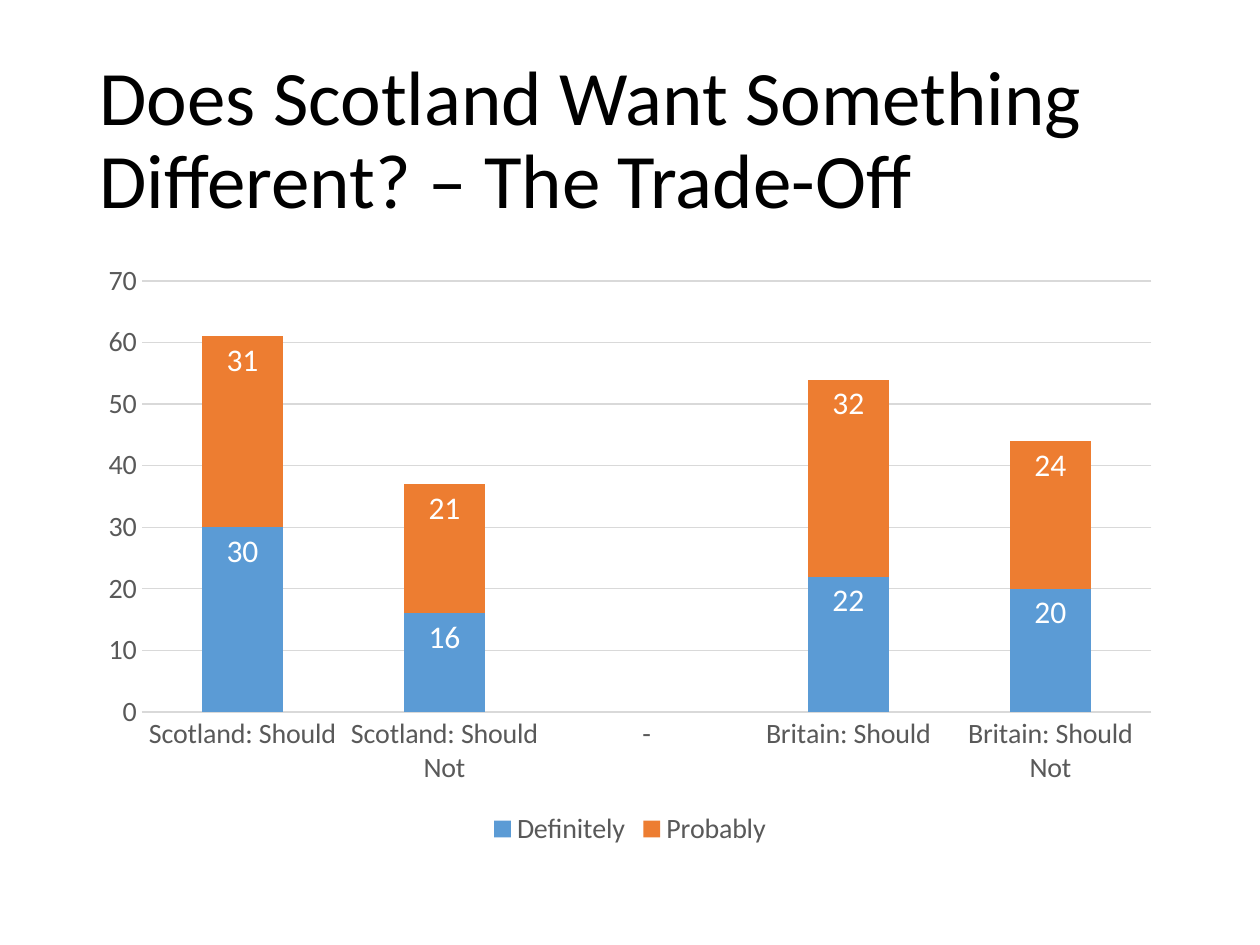
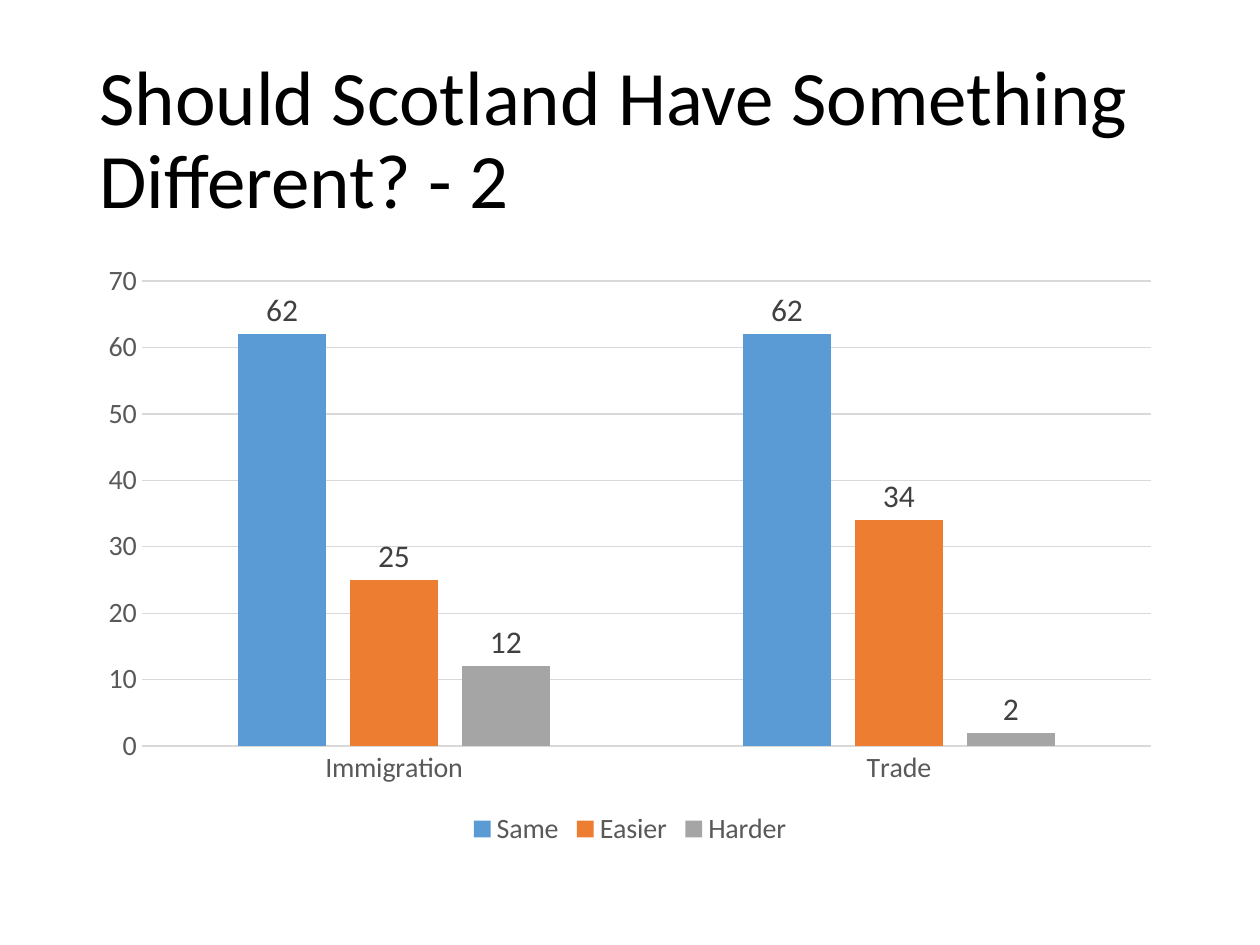
from dataclasses import dataclass
from typing import Optional

import pptx
import pptx.chart.chart
import pptx.chart.data
import pptx.dml.color
import pptx.enum.chart
import pptx.enum.text
import pptx.presentation
import pptx.slide
import pptx.text.text
import pptx.util

EMU_PER_PX = 9144  # 100 px to the inch
TITLE_ONLY_LAYOUT = 5


@dataclass(frozen=True)
class Theme:
    font: str = "Calibri"
    background: str = "FFFFFF"
    title_color: str = "000000"
    axis_color: str = "595959"
    grid_color: str = "D9D9D9"
    label_on_bar: str = "FFFFFF"
    label_above_bar: str = "404040"
    series_colors: tuple[str, ...] = ("5B9BD5", "ED7D31", "A5A5A5")
    title_size: int = 44
    label_size: int = 18
    axis_size: int = 16
    grid_width: float = 0.75


@dataclass(frozen=True)
class Box:
    left: int
    top: int
    width: int
    height: int

    def emu(self) -> tuple[int, int, int, int]:
        return (px(self.left), px(self.top), px(self.width), px(self.height))


@dataclass(frozen=True)
class BarStyle:
    chart_type: pptx.enum.chart.XL_CHART_TYPE
    gap_width: int
    overlap: int
    label_position: pptx.enum.chart.XL_LABEL_POSITION
    label_color: str


@dataclass(frozen=True)
class ChartSlide:
    title: str
    style: BarStyle
    categories: tuple[str, ...]
    series: dict[str, tuple[Optional[int], ...]]


THEME = Theme()
SLIDE_WIDTH, SLIDE_HEIGHT = 1000, 750
TITLE_BOX = Box(69, 40, 862, 145)
CHART_BOX = Box(69, 200, 862, 476)

STACKED = BarStyle(
    pptx.enum.chart.XL_CHART_TYPE.COLUMN_STACKED, 150, 100,
    pptx.enum.chart.XL_LABEL_POSITION.INSIDE_END, THEME.label_on_bar,
)
CLUSTERED = BarStyle(
    pptx.enum.chart.XL_CHART_TYPE.COLUMN_CLUSTERED, 219, -27,
    pptx.enum.chart.XL_LABEL_POSITION.OUTSIDE_END, THEME.label_above_bar,
)

CHART_SLIDES = (
    ChartSlide(
        "Does Scotland Want Something Different? – The Trade-Off",
        STACKED,
        ("Scotland: Should", "Scotland: Should Not", "-",
         "Britain: Should", "Britain: Should Not"),
        {"Definitely": (30, 16, None, 22, 20),
         "Probably": (31, 21, None, 32, 24)},
    ),
    ChartSlide(
        "Should Scotland Have Something Different? - 2",
        CLUSTERED,
        ("Immigration", "Trade"),
        {"Same": (62, 62), "Easier": (25, 34), "Harder": (12, 2)},
    ),
)


def px(length: int) -> int:
    return pptx.util.Emu(length * EMU_PER_PX)


def rgb(color: str) -> pptx.dml.color.RGBColor:
    return pptx.dml.color.RGBColor.from_string(color)


def format_font(font: pptx.text.text.Font, *, size: int, color: str) -> None:
    font.name = THEME.font
    font.size = pptx.util.Pt(size)
    font.bold = False
    font.color.rgb = rgb(color)


def write_text(
    text_frame: pptx.text.text.TextFrame, text: str, *, size: int, color: str,
    line_spacing: float = 1.0,
) -> None:
    text_frame.text = text
    text_frame.word_wrap = True
    text_frame.auto_size = pptx.enum.text.MSO_AUTO_SIZE.NONE
    text_frame.vertical_anchor = pptx.enum.text.MSO_ANCHOR.MIDDLE
    paragraph = text_frame.paragraphs[0]
    paragraph.alignment = pptx.enum.text.PP_ALIGN.LEFT
    paragraph.line_spacing = line_spacing
    format_font(paragraph.runs[0].font, size=size, color=color)


def format_grid_line(line: pptx.dml.line.LineFormat) -> None:
    line.color.rgb = rgb(THEME.grid_color)
    line.width = pptx.util.Pt(THEME.grid_width)


def format_axes(chart: pptx.chart.chart.Chart) -> None:
    for axis in (chart.category_axis, chart.value_axis):
        axis.major_tick_mark = pptx.enum.chart.XL_TICK_MARK.NONE
        axis.minor_tick_mark = pptx.enum.chart.XL_TICK_MARK.NONE
        format_font(axis.tick_labels.font, size=THEME.axis_size, color=THEME.axis_color)
    chart.category_axis.has_major_gridlines = False
    format_grid_line(chart.category_axis.format.line)

    value_axis = chart.value_axis
    value_axis.minimum_scale, value_axis.maximum_scale = 0, 70
    value_axis.major_unit = 10
    value_axis.has_major_gridlines = True
    format_grid_line(value_axis.major_gridlines.format.line)
    value_axis.format.line.fill.background()


def format_bars(chart: pptx.chart.chart.Chart, style: BarStyle) -> None:
    plot = chart.plots[0]
    plot.vary_by_categories = False
    plot.gap_width = style.gap_width
    plot.overlap = style.overlap
    for series, color in zip(plot.series, THEME.series_colors):
        series.invert_if_negative = False
        series.format.fill.solid()
        series.format.fill.fore_color.rgb = rgb(color)
        labels = series.data_labels
        labels.show_value = True
        labels.position = style.label_position
        format_font(labels.font, size=THEME.label_size, color=style.label_color)


def add_bar_chart(slide: pptx.slide.Slide, content: ChartSlide) -> None:
    chart_data = pptx.chart.data.CategoryChartData()
    chart_data.categories = content.categories
    for name, values in content.series.items():
        chart_data.add_series(name, values)
    chart = slide.shapes.add_chart(
        content.style.chart_type, *CHART_BOX.emu(), chart_data
    ).chart
    chart.has_title = False
    chart.font.name = THEME.font
    format_axes(chart)
    format_bars(chart, content.style)
    chart.has_legend = True
    chart.legend.position = pptx.enum.chart.XL_LEGEND_POSITION.BOTTOM
    chart.legend.include_in_layout = False
    format_font(chart.legend.font, size=THEME.axis_size, color=THEME.axis_color)


def add_chart_slide(
    presentation: pptx.presentation.Presentation, content: ChartSlide
) -> None:
    slide = presentation.slides.add_slide(presentation.slide_layouts[TITLE_ONLY_LAYOUT])
    slide.background.fill.solid()
    slide.background.fill.fore_color.rgb = rgb(THEME.background)
    title = slide.shapes.title
    title.left, title.top, title.width, title.height = TITLE_BOX.emu()
    write_text(
        title.text_frame, content.title, size=THEME.title_size,
        color=THEME.title_color, line_spacing=0.9,
    )
    add_bar_chart(slide, content)


def main() -> None:
    presentation = pptx.Presentation()
    presentation.slide_width = px(SLIDE_WIDTH)
    presentation.slide_height = px(SLIDE_HEIGHT)
    for content in CHART_SLIDES:
        add_chart_slide(presentation, content)
    presentation.save("out.pptx")


if __name__ == "__main__":
    main()
